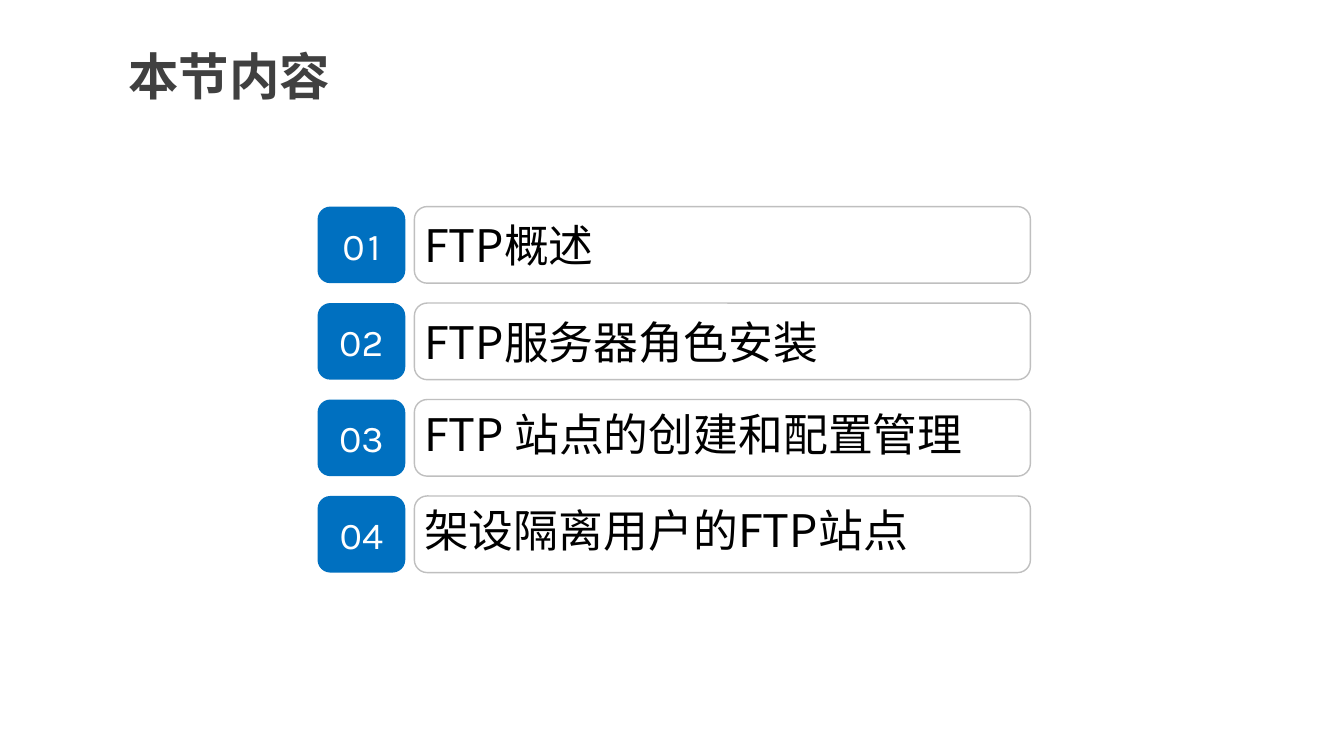
"""Build the section contents slide with four numbered topics."""
from pptx import Presentation
from pptx.dml.color import RGBColor
from pptx.enum import shapes, text
from pptx.oxml import ns
from pptx.util import Inches, Pt
from lxml import etree

COLORS = {"title": "404040", "number": "0070C0", "border": "BFBFBF",
          "white": "FFFFFF", "black": "000000"}
CJK_FONT = "Noto Sans CJK SC"
TOPICS = [
    ("FTP概述", text.MSO_ANCHOR.MIDDLE),
    ("FTP服务器角色安装", text.MSO_ANCHOR.MIDDLE),
    ("FTP 站点的创建和配置管理", text.MSO_ANCHOR.TOP),
    ("架设隔离用户的FTP站点", text.MSO_ANCHOR.TOP),
]


def write(shape, content, size, font, color, align, anchor, bold=False):
    frame = shape.text_frame
    frame.text = content
    frame.vertical_anchor = anchor
    paragraph = frame.paragraphs[0]
    paragraph.alignment = align
    run = paragraph.runs[0]
    run.font.size = Pt(size)
    run.font.bold = bold
    run.font.name = font
    run.font.color.rgb = RGBColor.from_string(COLORS[color])
    east_asian = etree.SubElement(run.font._element, ns.qn("a:ea"))
    east_asian.set("typeface", CJK_FONT)
    return run


def add_box(left, top, width):
    shape = slide.shapes.add_shape(
        shapes.MSO_SHAPE.ROUNDED_RECTANGLE,
        Inches(left), Inches(top), Inches(width), Inches(0.76))
    shape.shadow.inherit = False
    return shape


presentation = Presentation()
presentation.slide_width = Inches(13.33)
presentation.slide_height = Inches(7.5)
slide = presentation.slides.add_slide(presentation.slide_layouts[5])

title = slide.shapes.title
title.left, title.top = Inches(1.13), Inches(0.4)
title.width, title.height = Inches(2.29), Inches(0.71)
write(title, "本节内容", 36, "Arial", "title",
      text.PP_ALIGN.CENTER, text.MSO_ANCHOR.TOP, bold=True)
title.text_frame.auto_size = text.MSO_AUTO_SIZE.SHAPE_TO_FIT_TEXT

for index, (topic, anchor) in enumerate(TOPICS):
    top = 2.05 + index * 0.957

    number_box = add_box(3.15, top, 0.87)
    number_box.fill.solid()
    number_box.fill.fore_color.rgb = RGBColor.from_string(COLORS["number"])
    number_box.line.fill.background()
    number = write(number_box, f"{index + 1:02d}", 27, "Karla", "white",
                   text.PP_ALIGN.CENTER, text.MSO_ANCHOR.MIDDLE)
    if index == 0:
        number.font._element.set("spc", "220")

    topic_box = add_box(4.11, top, 6.11)
    topic_box.fill.background()
    topic_box.line.color.rgb = RGBColor.from_string(COLORS["border"])
    topic_box.line.width = Pt(1)
    frame = topic_box.text_frame
    frame.margin_left = frame.margin_right = Inches(0.06)
    frame.margin_top = frame.margin_bottom = Inches(0.03)
    write(topic_box, topic, 32, CJK_FONT, "black", text.PP_ALIGN.LEFT, anchor)

presentation.save("out.pptx")
